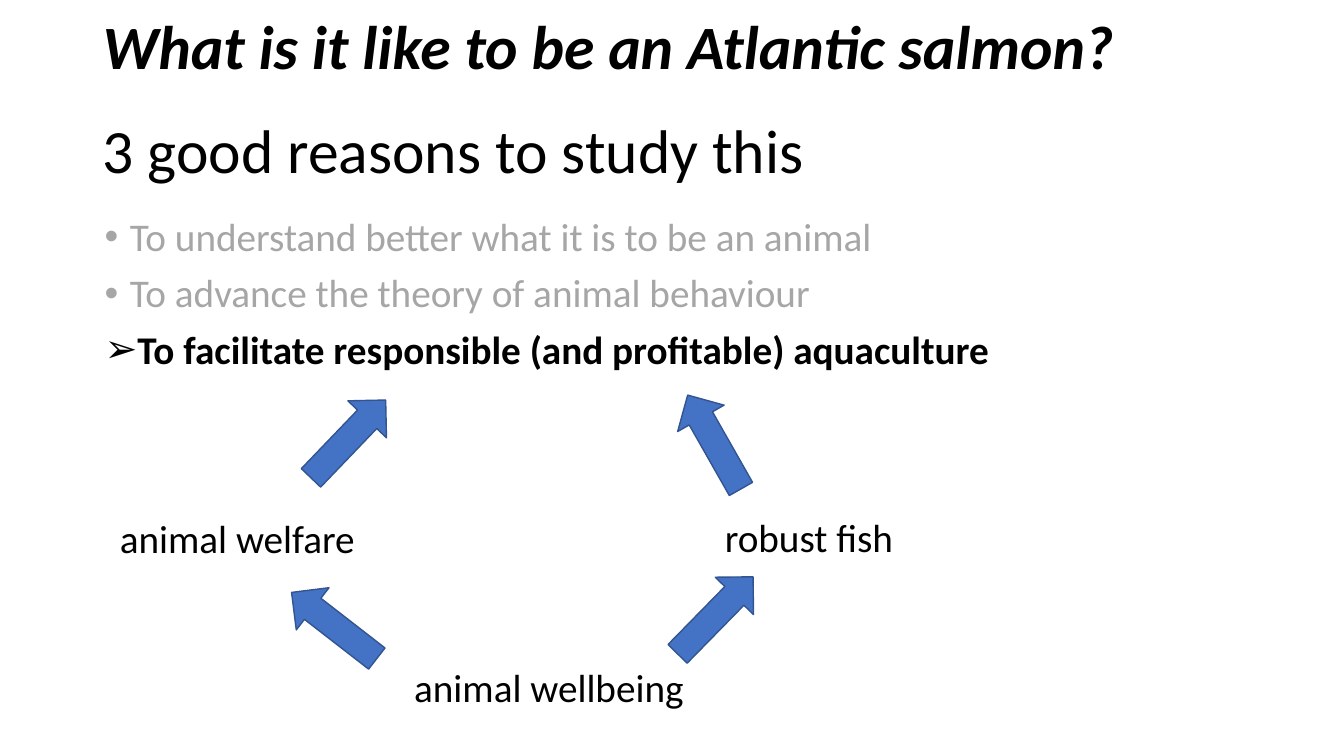
from dataclasses import dataclass

from lxml.etree import SubElement
from pptx import Presentation
from pptx.dml.color import RGBColor
from pptx.enum.shapes import MSO_SHAPE
from pptx.enum.text import MSO_ANCHOR, MSO_AUTO_SIZE, PP_ALIGN
from pptx.oxml.ns import qn
from pptx.util import Inches, Pt


@dataclass(frozen=True)
class Theme:
    font: str = "Calibri"
    heading_size: int = 44
    body_size: int = 28
    text: str = "000000"
    muted: str = "A6A6A6"
    arrow_fill: str = "4472C4"
    arrow_line: str = "325491"


def write_text(paragraph, text, *, font, size, color, bold=False, italic=False,
               line_spacing=None, space_before=None):
    paragraph.alignment = PP_ALIGN.LEFT
    if line_spacing is not None:
        paragraph.line_spacing = line_spacing
    if space_before is not None:
        paragraph.space_before = Pt(space_before)
    run = paragraph.add_run()
    run.text = text
    run.font.name = font
    run.font.size = Pt(size)
    run.font.bold = bold
    run.font.italic = italic
    run.font.color.rgb = RGBColor.from_string(color)


class SlideBuilder:
    def __init__(self, slide, theme):
        self.slide = slide
        self.theme = theme

    def text_box(self, left, top, width, height, wrap=True, anchor=MSO_ANCHOR.TOP):
        box = self.slide.shapes.add_textbox(
            Inches(left), Inches(top), Inches(width), Inches(height))
        frame = box.text_frame
        frame.word_wrap = wrap
        frame.vertical_anchor = anchor
        return frame

    def heading(self, text, top, height, **emphasis):
        frame = self.text_box(0.92, top, 11.5, height, anchor=MSO_ANCHOR.MIDDLE)
        write_text(frame.paragraphs[0], text, font=self.theme.font,
                   size=self.theme.heading_size, color=self.theme.text,
                   line_spacing=0.9, **emphasis)

    def bullet_list(self, items, left, top, width, height):
        frame = self.text_box(left, top, width, height)
        for index, (symbol, text, color, bold) in enumerate(items):
            paragraph = frame.add_paragraph() if index else frame.paragraphs[0]
            write_text(paragraph, text, font=self.theme.font,
                       size=self.theme.body_size, color=color, bold=bold,
                       line_spacing=0.9, space_before=10)
            properties = paragraph._p.get_or_add_pPr()
            properties.set("marL", str(Inches(0.25)))
            properties.set("indent", str(-Inches(0.25)))
            SubElement(properties, qn("a:buFont")).set("typeface", "Arial")
            SubElement(properties, qn("a:buChar")).set("char", symbol)

    def label(self, text, left, top, width):
        frame = self.text_box(left, top, width, 0.57, wrap=False)
        frame.auto_size = MSO_AUTO_SIZE.SHAPE_TO_FIT_TEXT
        write_text(frame.paragraphs[0], text, font=self.theme.font,
                   size=self.theme.body_size, color=self.theme.text)

    def arrow(self, left, top, rotation):
        shape = self.slide.shapes.add_shape(
            MSO_SHAPE.UP_ARROW, Inches(left), Inches(top), Inches(0.53), Inches(1.07))
        shape.rotation = rotation
        shape.shadow.inherit = False
        shape.fill.solid()
        shape.fill.fore_color.rgb = RGBColor.from_string(self.theme.arrow_fill)
        shape.line.color.rgb = RGBColor.from_string(self.theme.arrow_line)
        shape.line.width = Pt(1)


def main():
    presentation = Presentation()
    presentation.slide_width = Inches(13.33)
    presentation.slide_height = Inches(7.5)
    theme = Theme()
    slide = presentation.slides.add_slide(presentation.slide_layouts[6])
    builder = SlideBuilder(slide, theme)

    builder.heading("3 good reasons to study this", 0.8, 1.45)
    builder.bullet_list([
        ("•", "To understand better what it is to be an animal", theme.muted, False),
        ("•", "To advance the theory of animal behaviour", theme.muted, False),
        ("➢", "To facilitate responsible (and profitable) aquaculture", theme.text, True),
    ], 0.94, 2.11, 11.5, 4.76)

    for left, top, rotation in [(3.19, 3.82, 43.8), (6.82, 3.85, 330.4),
                                (3.05, 5.67, 307.8), (6.83, 5.57, 44.4)]:
        builder.arrow(left, top, rotation)

    for text, left, top, width in [("animal welfare", 1.09, 5.05, 2.55),
                                   ("robust fish", 7.09, 5.04, 1.89),
                                   ("animal wellbeing", 4.01, 6.53, 2.9)]:
        builder.label(text, left, top, width)

    builder.heading("What is it like to be an Atlantic salmon?", 0.09, 0.81,
                    bold=True, italic=True)
    presentation.save("out.pptx")


if __name__ == "__main__":
    main()
